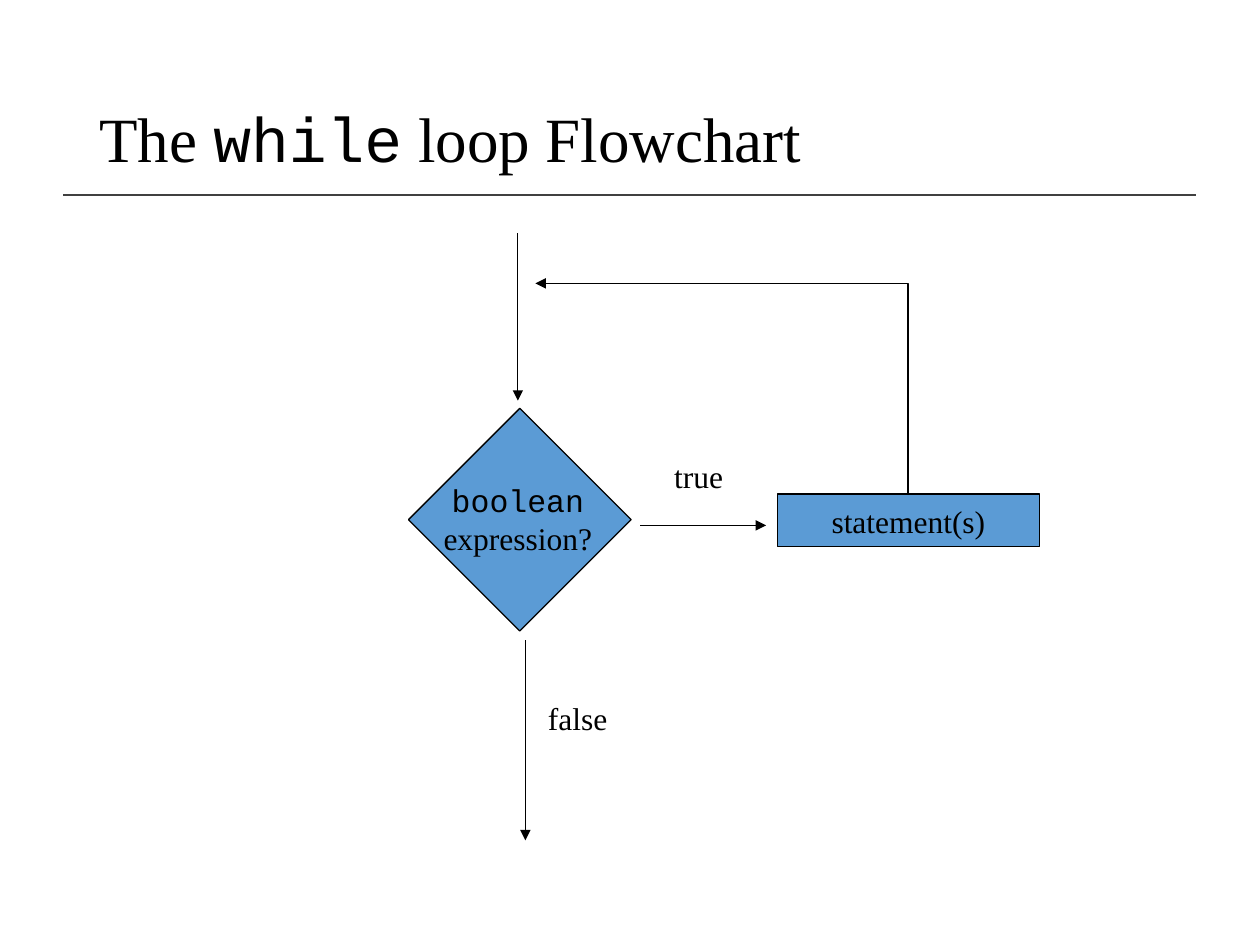
"""Build a slide with the flowchart of a while loop."""
from lxml import etree
from pptx import Presentation
from pptx.dml.color import RGBColor
from pptx.enum.shapes import MSO_CONNECTOR, MSO_SHAPE
from pptx.enum.text import MSO_ANCHOR, PP_ALIGN
from pptx.oxml.ns import qn
from pptx.util import Inches, Pt

BLACK = RGBColor(0x00, 0x00, 0x00)
GREY = RGBColor(0x40, 0x40, 0x40)
BLUE = RGBColor(0x5B, 0x9B, 0xD5)
SERIF, MONO = "Times New Roman", "Courier New"
STRAIGHT, ELBOW = MSO_CONNECTOR.STRAIGHT, MSO_CONNECTOR.ELBOW
RECTANGLE = MSO_SHAPE.RECTANGLE
MIDDLE, LEFT, CENTER = MSO_ANCHOR.MIDDLE, PP_ALIGN.LEFT, PP_ALIGN.CENTER


def write(tf, lines, size, align):
    for i, runs in enumerate(lines):
        p = tf.add_paragraph() if i else tf.paragraphs[0]
        p.alignment = align
        for text, font in runs:
            r = p.add_run()
            r.text = text
            for name, value in {"name": font, "size": Pt(size)}.items():
                setattr(r.font, name, value)
            r.font.color.rgb = BLACK


def connect(kind, ends, color=BLACK, width=0.75, arrow=True):
    c = s.shapes.add_connector(kind, *[Inches(v) for v in ends])
    c.line.color.rgb = color
    c.line.width = Pt(width)
    if arrow:
        etree.SubElement(c.line._get_or_add_ln(), qn("a:tailEnd"), type="triangle")
    etree.SubElement(c._element.spPr, qn("a:effectLst"))
    return c


prs = Presentation()
prs.slide_width, prs.slide_height = Inches(10), Inches(7.5)
s = prs.slides.add_slide(prs.slide_layouts[5])

connect(STRAIGHT, (0.5, 1.55, 9.49, 1.55), GREY, 1, False)

title = s.shapes.title
title.left, title.top = Inches(0.69), Inches(0.4)
title.width, title.height = Inches(8.62), Inches(1.45)
tf = title.text_frame
tf.vertical_anchor = MIDDLE
write(tf, [[("The ", SERIF), ("while", MONO), (" loop Flowchart", SERIF)]], 36, LEFT)
tf.paragraphs[0].line_spacing = 0.9

boxes = [
    ((3.5, 3.5, 1.25, 1.25), 45, ""),
    ((6.17, 3.92, 2.08, 0.42), 0, "statement(s)"),
]
for place, rotation, text in boxes:
    sp = s.shapes.add_shape(RECTANGLE, *[Inches(v) for v in place])
    sp.rotation = rotation
    sp.shadow.inherit = False
    sp.fill.solid()
    sp.fill.fore_color.rgb = BLUE
    sp.line.color.rgb = BLACK
    sp.line.width = Pt(0.75)
    if text:
        sp.text_frame.word_wrap = False
        sp.text_frame.vertical_anchor = MIDDLE
        write(sp.text_frame, [[(text, SERIF)]], 18, CENTER)

for ends in [
    (4.11, 1.85, 4.11, 3.18),
    (4.17, 5.08, 4.17, 6.67),
    (5.08, 4.17, 6.08, 4.17),
]:
    connect(STRAIGHT, ends)

loop_back = connect(ELBOW, (7.21, 3.92, 4.25, 2.25))
guides = loop_back._element.spPr.find(qn("a:prstGeom")).find(qn("a:avLst"))
etree.SubElement(guides, qn("a:gd"), name="adj1", fmla="val 100")

labels = [
    ((3.42, 3.77, 1.38, 0.7), [[("boolean", MONO)], [("expression?", SERIF)]]),
    ((5.25, 3.58, 0.59, 0.4), [[("true", SERIF)]]),
    ((4.25, 5.5, 0.67, 0.4), [[("false", SERIF)]]),
]
for place, lines in labels:
    sp = s.shapes.add_textbox(*[Inches(v) for v in place])
    sp.text_frame.word_wrap = False
    write(sp.text_frame, lines, 18, CENTER)

prs.save("out.pptx")
